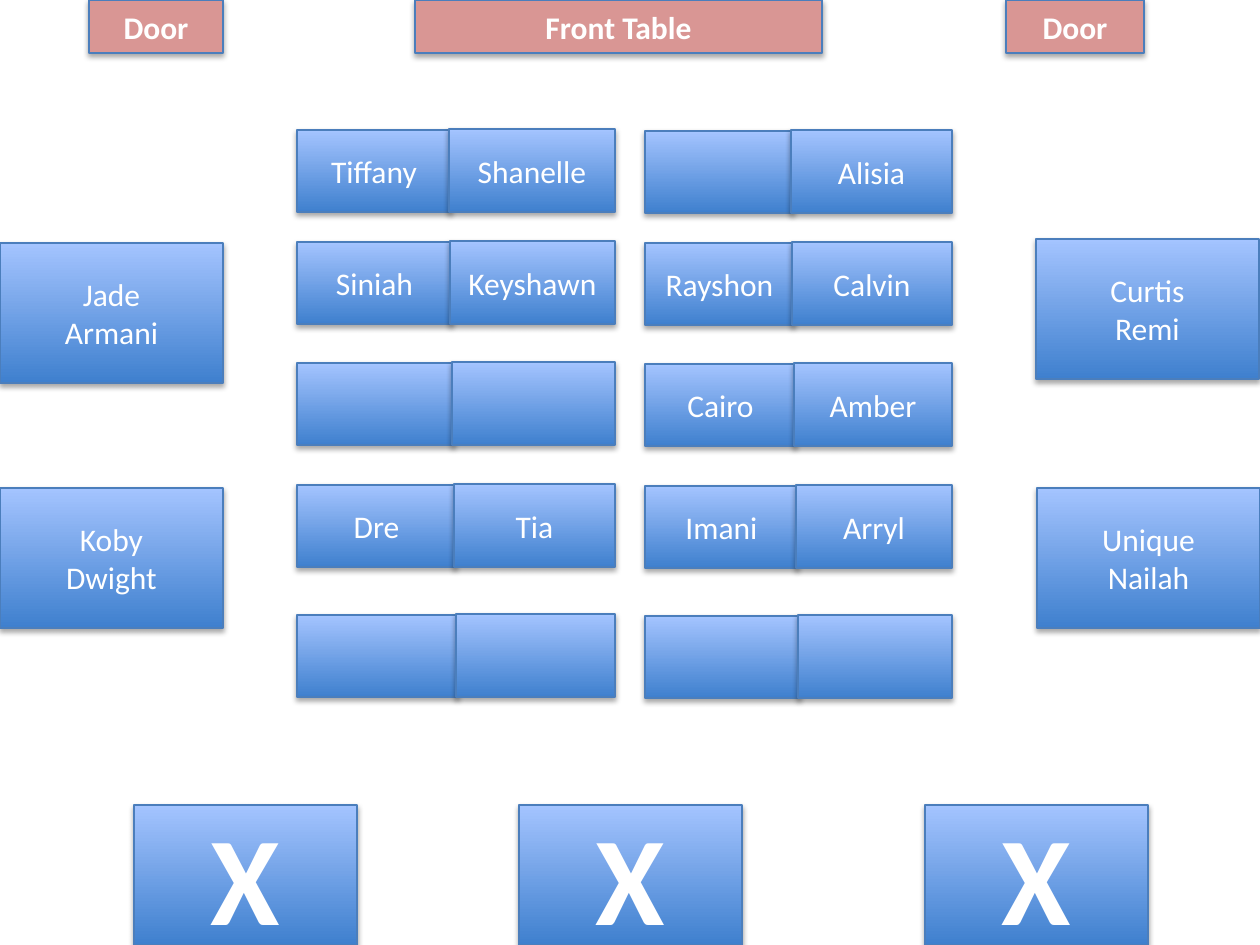
from lxml.etree import SubElement
from pptx import Presentation
from pptx.dml.color import RGBColor
from pptx.enum.shapes import MSO_SHAPE
from pptx.enum.text import MSO_ANCHOR, PP_ALIGN
from pptx.oxml.ns import qn
from pptx.util import Emu, Pt

PX = 914400 / 126
WHITE, ROSE, OUTLINE = "FFFFFF", "D99694", "4B7EBC"
DEEP_BLUE, LIGHT_BLUE = "3F80CE", "A4C4FF"
rgb = RGBColor.from_string


def add_box(left, top, width, height, label, size=18, bold=False, flat_color=None):
    """Add a shadowed box, with the blue gradient unless flat_color is given."""
    box = slide.shapes.add_shape(
        MSO_SHAPE.RECTANGLE, *(Emu(round(v * PX)) for v in (left, top, width, height)))
    if flat_color:
        box.fill.solid()
        box.fill.fore_color.rgb = rgb(flat_color)
    else:
        box.fill.gradient()
        box.fill.gradient_angle = 90
        for stop, color in zip(box.fill.gradient_stops, (DEEP_BLUE, LIGHT_BLUE)):
            stop.color.rgb = rgb(color)
    box.line.color.rgb = rgb(OUTLINE)
    box.line.width = Pt(0.75)

    box.shadow.inherit = False
    effects = box._element.spPr.find(qn("a:effectLst"))
    shadow = SubElement(effects, qn("a:outerShdw"), blurRad="40000", dist="23000",
                        dir="5400000", rotWithShape="0")
    shadow_color = SubElement(shadow, qn("a:srgbClr"), val="000000")
    SubElement(shadow_color, qn("a:alpha"), val="35000")

    if label:
        frame = box.text_frame
        frame.text = label
        frame.vertical_anchor = MSO_ANCHOR.MIDDLE
        for paragraph in frame.paragraphs:
            paragraph.alignment = PP_ALIGN.CENTER
            font = paragraph.runs[0].font
            font.name = "Calibri"
            font.size = Pt(size)
            font.bold = bold
            font.color.rgb = rgb(WHITE)


prs = Presentation()
prs.slide_width = Emu(round(1260 * PX))
prs.slide_height = Emu(round(945 * PX))
slide = prs.slides.add_slide(prs.slide_layouts[6])

# Front of the room
for left, width, label in [(89, 134, "Door"), (1006, 138, "Door"), (415, 407, "Front Table")]:
    add_box(left, 0, width, 53, label, bold=True, flat_color=ROSE)

# Paired desks: left edge, right edge, downward shift, then split and names per row
row_tops = [130, 242, 363, 485, 615]
banks = [
    (297, 615, 0, [(449, "Tiffany", "Shanelle"), (450, "Siniah", "Keyshawn"),
                   (452, "", ""), (454, "Dre", "Tia"), (456, "", "")]),
    (645, 952, 1, [(791, "", "Alisia"), (792, "Rayshon", "Calvin"),
                   (794, "Cairo", "Amber"), (796, "Imani", "Arryl"), (798, "", "")]),
]
for left, right, shift, rows in banks:
    for row_top, (split, left_name, right_name) in zip(row_tops, rows):
        top = row_top + shift
        add_box(left, top, split + 2 - left, 82, left_name)
        add_box(split, top - 1, right - split, 83, right_name)

# Side tables
for left, top, names in [(0, 243, "Jade\nArmani"), (0, 488, "Koby\nDwight"),
                         (1036, 239, "Curtis\nRemi"), (1037, 488, "Unique\nNailah")]:
    add_box(left, top, 223, 140, names)

# Unused back tables
for left in (134, 519, 925):
    add_box(left, 805, 223, 140, "X", size=72, bold=True)

prs.save("out.pptx")
